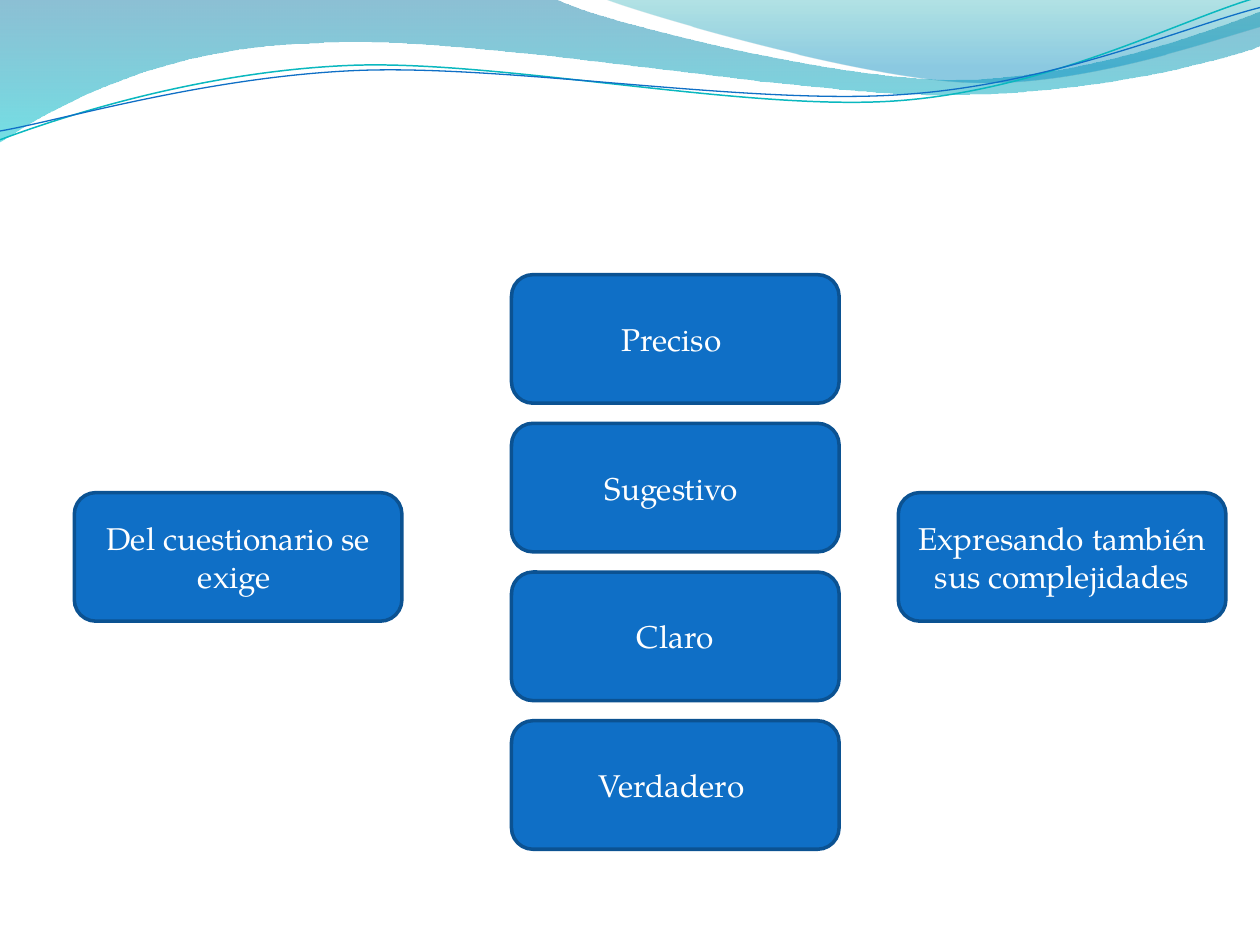
from dataclasses import dataclass

from lxml import etree
from pptx import Presentation
from pptx.dml.color import RGBColor
from pptx.enum.shapes import MSO_SHAPE
from pptx.enum.text import MSO_ANCHOR, PP_ALIGN
from pptx.oxml.ns import qn
from pptx.util import Inches, Pt

ROUND = MSO_SHAPE.ROUNDED_RECTANGLE
MIDDLE = MSO_ANCHOR.MIDDLE
CENTER = PP_ALIGN.CENTER
BLANK = 6


@dataclass(frozen=True)
class Theme:
    font: str = "TeX Gyre Pagella"
    size: int = 18
    text: str = "FFFFFF"
    box: str = "0F6FC6"
    edge: str = "0B5292"
    teal: str = "0AB8BF"
    # Gradient stops: position, colour, opacity in percent
    wave: tuple = ((0, "0074A1", 45), (100, "00C6CF", 55))
    crest: tuple = ((0, "00A1A9", 30), (80, "008BBF", 45))


THEME = Theme()

# Outlines in inches: a pair is a line to a point, six numbers are a curve
WAVE = [(0, 0), (4.4, -0.01),
        (4.76, 0.17, 6.64, 0.63, 7.58, 0.63),
        (8.53, 0.63, 9.58, 0.26, 10, 0.09), (10.01, 0.36),
        (9.83, 0.44, 8.7, 0.76, 7.46, 0.75),
        (6.22, 0.75, 3.82, 0.28, 2.57, 0.34),
        (1.29, 0.36, 0.46, 0.83, -0.01, 1.13)]
CREST = [(4.79, -0.01),
         (5.09, 0.11, 6.82, 0.62, 7.69, 0.65),
         (8.56, 0.69, 9.61, 0.32, 10, 0.21), (10, 0)]
TEAL = [(0, 1.11),
        (0.48, 0.93, 1.58, 0.57, 2.77, 0.52),
        (3.95, 0.47, 5.93, 0.89, 7.13, 0.8),
        (8.33, 0.71, 9.38, 0.15, 9.98, -0.02)]
BLUE = [(0, 1.04),
        (0.47, 0.96, 1.64, 0.61, 2.83, 0.56),
        (4.03, 0.51, 5.97, 0.84, 7.17, 0.75),
        (8.36, 0.67, 9.41, 0.21, 10, 0.06)]

# Box grid
BOX_W, BOX_H = 2.6, 1.02
LEFT, MID, RIGHT = 0.59, 4.06, 7.13
TOP, PITCH = 2.18, 1.18
SIDE_TOP = 3.91
TRAITS = ["Preciso ", "Sugestivo ", "Claro", "Verdadero "]


def rgb(code):
    return RGBColor.from_string(code)


def trace(slide, outline, close):
    """Draw the outline through its end points, then bend the curves."""
    ends = [(Inches(step[-2]), Inches(step[-1])) for step in outline]
    pen = slide.shapes.build_freeform(*ends[0])
    pen.add_line_segments(ends[1:], close=close)
    shape = pen.convert_to_shape()
    shape.shadow.inherit = False
    lines = list(shape._element.spPr.iter(qn("a:lnTo")))
    for line, step in zip(lines, outline[1:]):
        if len(step) == 6:
            bend(shape, line, step)
    return shape


def bend(shape, line, curve):
    """Turn a line into a cubic curve with the same end."""
    line.tag = qn("a:cubicBezTo")
    for i in (2, 0):
        point = etree.Element(qn("a:pt"))
        point.set("x", str(Inches(curve[i]) - shape.left))
        point.set("y", str(Inches(curve[i + 1]) - shape.top))
        line.insert(0, point)


def add_wave(slide, outline, stops):
    shape = trace(slide, outline, True)
    shape.line.fill.background()
    shape.fill.gradient()
    shape.fill.gradient_angle = 270
    for stop, (place, color, _) in zip(shape.fill.gradient_stops, stops):
        stop.position = place / 100
        stop.color.rgb = rgb(color)
    # Opacity of each stop
    colors = shape._element.spPr.iter(qn("a:srgbClr"))
    for node, (_, _, alpha) in zip(colors, stops):
        etree.SubElement(node, qn("a:alpha")).set("val", str(alpha * 1000))


def add_curve(slide, outline, color, width):
    shape = trace(slide, outline, False)
    shape.fill.background()
    shape.line.color.rgb = rgb(color)
    shape.line.width = Pt(width)


def put_text(shape, text, size=THEME.size, color=THEME.text, align=CENTER):
    frame = shape.text_frame
    frame.word_wrap = True
    frame.vertical_anchor = MIDDLE
    para = frame.paragraphs[0]
    para.alignment = align
    run = para.add_run()
    run.text = text
    run.font.name = THEME.font
    run.font.size = Pt(size)
    run.font.color.rgb = rgb(color)


def add_box(slide, text, left, top):
    box = slide.shapes.add_shape(ROUND, Inches(left), Inches(top),
                                 Inches(BOX_W), Inches(BOX_H))
    box.shadow.inherit = False
    box.fill.solid()
    box.fill.fore_color.rgb = rgb(THEME.box)
    box.line.color.rgb = rgb(THEME.edge)
    box.line.width = Pt(2)
    put_text(box, text)


def main():
    deck = Presentation()
    deck.slide_width, deck.slide_height = Inches(10), Inches(7.5)
    slide = deck.slides.add_slide(deck.slide_layouts[BLANK])

    # Waves along the top
    add_wave(slide, WAVE, THEME.wave)
    add_wave(slide, CREST, THEME.crest)
    add_curve(slide, TEAL, THEME.teal, 0.85)
    add_curve(slide, BLUE, THEME.box, 0.75)

    # Demand, its traits, and the closing remark
    add_box(slide, "Del cuestionario se exige ", LEFT, SIDE_TOP)
    for row, trait in enumerate(TRAITS):
        add_box(slide, trait, MID, TOP + row * PITCH)
    add_box(slide, "Expresando también sus complejidades", RIGHT, SIDE_TOP)

    deck.save("out.pptx")


if __name__ == "__main__":
    main()
